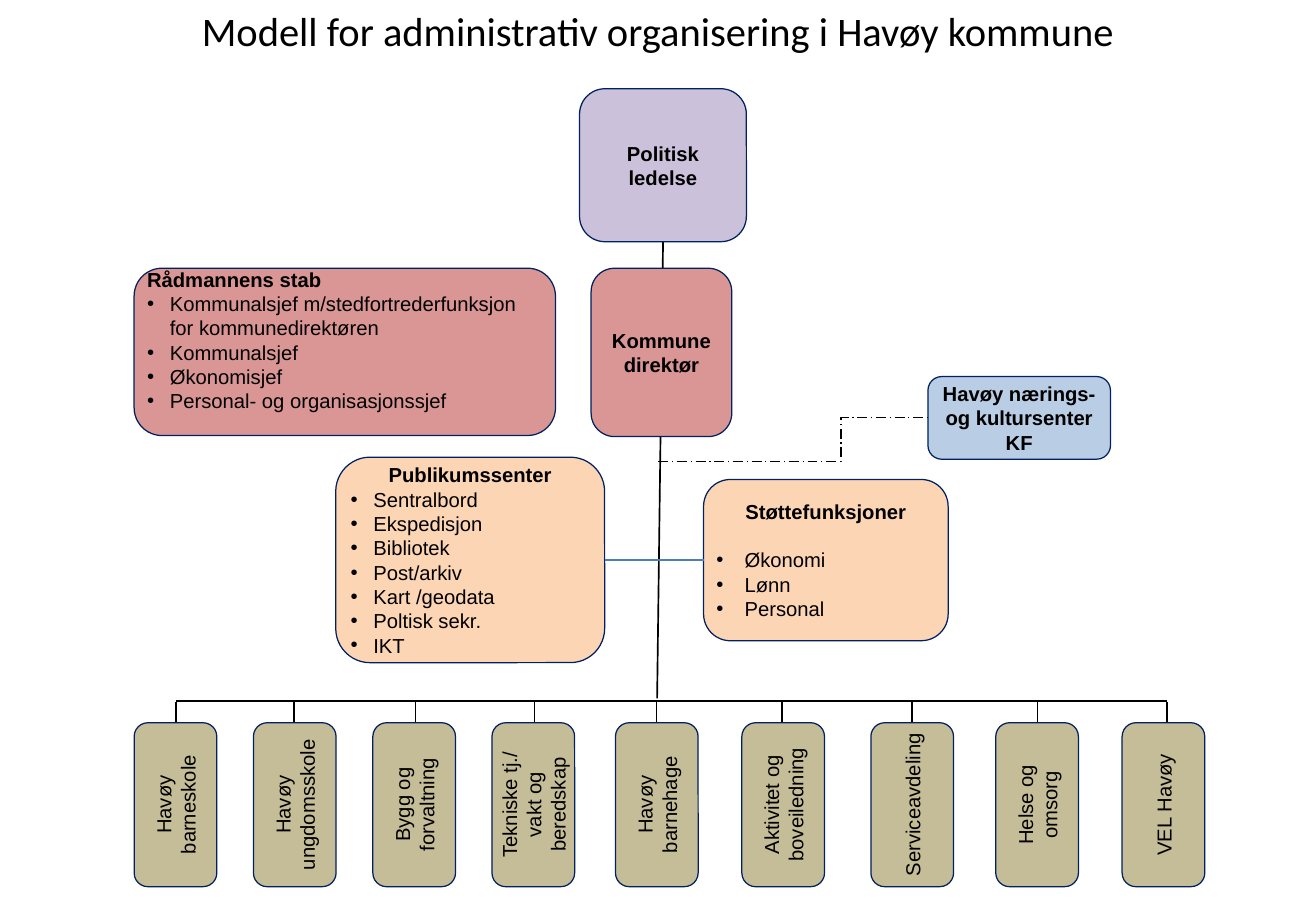
from pptx import Presentation
from pptx.dml.color import RGBColor
from pptx.enum import dml, shapes, text
from pptx.oxml import ns, xmlchemy
from pptx.util import Pt

HUES = {
    "black": "000000", "white": "FFFFFF", "navy": "002060", "blue": "4B7EBC",
    "peach": "FCD5B5", "rose": "D99694", "sky": "B9CDE5", "lilac": "CCC1DA",
    "khaki": "C4BD97",
}
HUES = {name: RGBColor.from_string(code) for name, code in HUES.items()}


def add_line(x1, y1, x2, y2, hue="black", width=1, kind="STRAIGHT"):
    line = slide.shapes.add_connector(
        shapes.MSO_CONNECTOR[kind], Pt(x1), Pt(y1), Pt(x2), Pt(y2))
    line.line.color.rgb = HUES[hue]
    line.line.width = Pt(width)
    line._element.spPr.append(xmlchemy.OxmlElement("a:effectLst"))
    return line


def add_box(place, hue, head, items=(), bold=True, inset=2.88, left=False, indent=13.5):
    box = slide.shapes.add_shape(
        shapes.MSO_SHAPE.ROUNDED_RECTANGLE, *[Pt(v) for v in place])
    box.shadow.inherit = False
    box.fill.solid()
    box.fill.fore_color.rgb = HUES[hue]
    box.line.color.rgb = HUES["navy"]
    box.line.width = Pt(0.75)
    frame = box.text_frame
    frame.word_wrap = True
    frame.vertical_anchor = text.MSO_ANCHOR.MIDDLE
    frame.margin_left = frame.margin_right = Pt(inset)
    frame.margin_top = frame.margin_bottom = Pt(min(inset, 3.6))
    for i, words in enumerate([head, *items]):
        para = frame.paragraphs[0] if i == 0 else frame.add_paragraph()
        flush = left or i > 0
        para.alignment = text.PP_ALIGN.LEFT if flush else text.PP_ALIGN.CENTER
        if i > 0:
            props = para._p.get_or_add_pPr()
            props.set("marL", str(Pt(indent)))
            props.set("indent", str(-Pt(indent)))
            for tag, key, value in [("a:buFont", "typeface", "Arial"),
                                    ("a:buChar", "char", "•")]:
                mark = xmlchemy.OxmlElement(tag)
                mark.set(key, value)
                props.append(mark)
        run = para.add_run()
        run.text = words
        run.font.name = "Arial"
        run.font.size = Pt(12)
        run.font.bold = bold and i == 0
        run.font.color.rgb = HUES["black"]
    return box


deck = Presentation()
deck.slide_width, deck.slide_height = Pt(780), Pt(540)
slide = deck.slides.add_slide(deck.slide_layouts[5])

title = slide.shapes.title
title.left, title.top, title.width, title.height = Pt(0), Pt(0), Pt(780), Pt(36.4)
title.fill.solid()
title.fill.fore_color.rgb = HUES["white"]
para = title.text_frame.paragraphs[0]
para.alignment = text.PP_ALIGN.CENTER
run = para.add_run()
run.text = "Modell for administrativ organisering i Havøy kommune"
run.font.name = "Calibri"
run.font.size = Pt(24)
run.font.color.rgb = HUES["black"]

units = [
    (79.5, 104.2, "Havøy barneskole"),
    (150.2, 174.2, "Havøy ungdomsskole"),
    (221, 246.2, "Bygg og forvaltning"),
    (291.6, 316.8, "Tekniske tj./ vakt og beredskap"),
    (364.8, 389.2, "Havøy barnehage"),
    (439.7, 463.7, "Aktivitet og boveiledning"),
    (516.2, 540.7, "Serviceavdeling"),
    (590.2, 614.9, "Helse og omsorg"),
    (665.1, 691.9, "VEL Havøy"),
]
add_line(units[0][1], 415.6, units[-1][1], 415.6)
add_line(393, 143.3, 389.5, 414)
for left, stem, name in units:
    add_line(stem, 416, stem, 428.4)
    unit = add_box((left, 428.4, 49, 97.2), "khaki", name, bold=False)
    unit.text_frame._txBody.bodyPr.set("vert", "vert270")

add_box((199, 271, 159.4, 121.8), "peach", "Publikumssenter", [
    "Sentralbord", "Ekspedisjon", "Bibliotek", "Post/arkiv",
    "Kart /geodata", "Poltisk sekr.", "IKT"])
add_box((350.4, 159, 83.4, 99.8), "rose", "Kommunedirektør", inset=7.2)
staff = add_box((79.5, 159, 249.8, 99.2), "rose", "Rådmannens stab", [
    "Kommunalsjef m/stedfortrederfunksjon for kommunedirektøren",
    "Kommunalsjef", "Økonomisjef", "Personal- og organisasjonssjef"], left=True)
staff.text_frame.margin_bottom = Pt(17)
add_box((550, 223.2, 108.2, 49), "sky", "Havøy nærings- og kultursenter KF")
add_box((343.5, 52.6, 98.9, 90.7), "lilac", "Politisk ledelse", inset=7.2)
support = add_box((417, 284.2, 145, 95.6), "peach", "Støttefunksjoner",
                  ["Økonomi", "Lønn", "Personal"], indent=16.8)
support.text_frame.paragraphs[0].space_after = Pt(14)

add_line(358.4, 332, 417, 332, "blue")
branch = add_line(390.2, 273.4, 550, 247.6, width=0.75, kind="ELBOW")
branch.line.dash_style = dml.MSO_LINE.LONG_DASH_DOT
bend = xmlchemy.OxmlElement("a:gd")
bend.set("name", "adj1")
bend.set("fmla", "val 67800")
branch._element.spPr.find(ns.qn("a:prstGeom")).get_or_add_avLst().append(bend)

deck.save("out.pptx")
